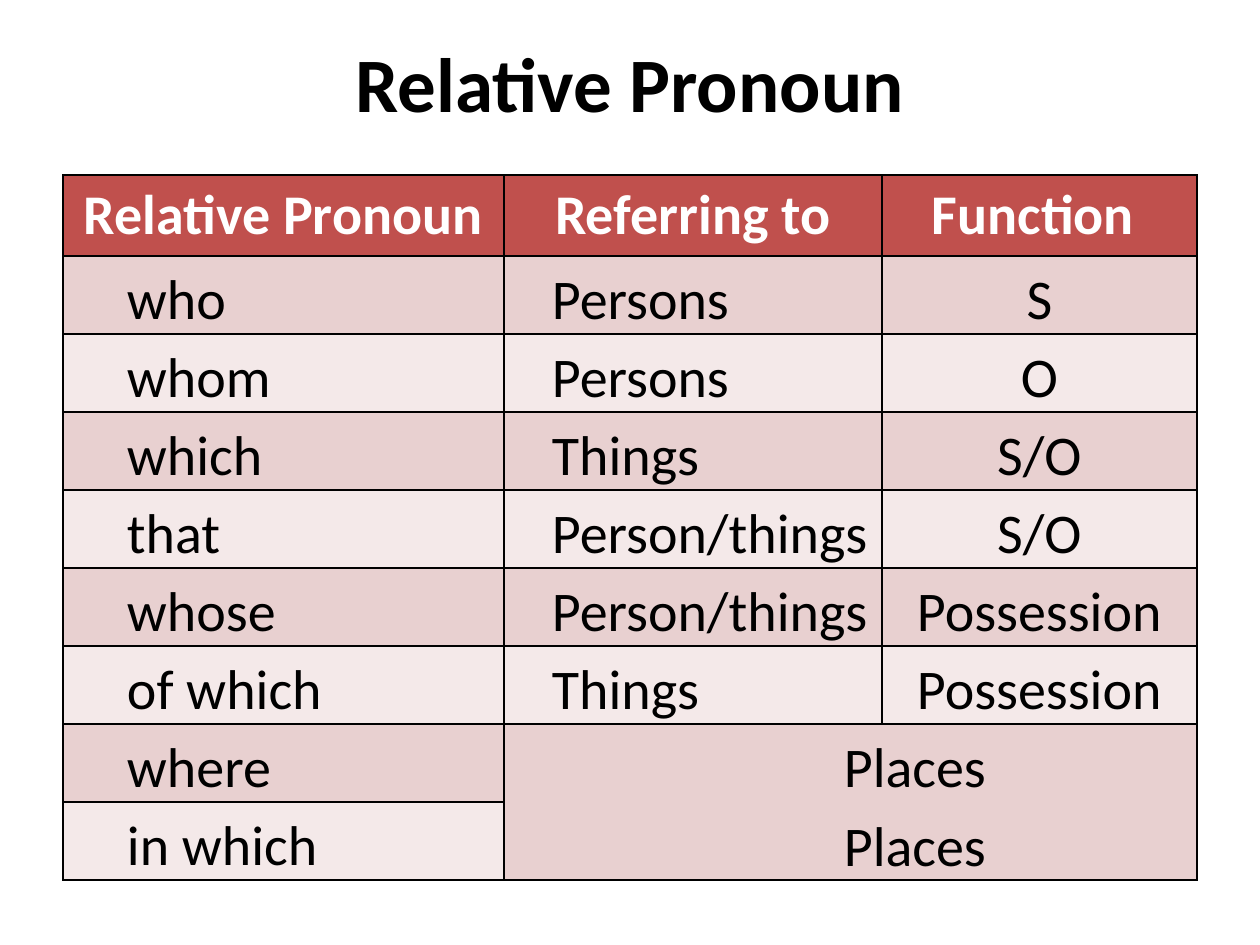
from lxml import etree
from pptx import Presentation
from pptx.dml.color import RGBColor
from pptx.enum.text import MSO_ANCHOR, PP_ALIGN
from pptx.oxml.ns import qn
from pptx.util import Pt

PX = 914400 // 126
CENTER, LEFT = PP_ALIGN.CENTER, PP_ALIGN.LEFT
MIDDLE = MSO_ANCHOR.MIDDLE


def rgb(value):
    return RGBColor.from_string(value)


def style(p, size, color, bold, align):
    p.alignment = align
    p.font.name = "Calibri"
    p.font.size = Pt(size)
    p.font.bold = bold
    p.font.color.rgb = rgb(color)


prs = Presentation()
prs.slide_width, prs.slide_height = 1260 * PX, 945 * PX
s = prs.slides.add_slide(prs.slide_layouts[6])

tf = s.shapes.add_textbox(63 * PX, 3 * PX, 1134 * PX, 158 * PX).text_frame
tf.word_wrap = True
tf.vertical_anchor = MIDDLE
p = tf.paragraphs[0]
p.text = "Relative Pronoun"
style(p, 44, "000000", True, CENTER)

rows = [
    ("Relative Pronoun", "Referring to", "Function "),
    ("who", "Persons", "S"),
    ("whom", "Persons", "O"),
    ("which", "Things", "S/O"),
    ("that", "Person/things", "S/O"),
    ("whose", "Person/things", "Possession"),
    ("of which", "Things", "Possession"),
    ("where", "Places\nPlaces", ""),
    ("in which", "", ""),
]
widths = [441, 378, 315]
indents = [55, 39, 0]
header_height, row_height = 81, 78
height = header_height + row_height * (len(rows) - 1)
table = s.shapes.add_table(len(rows), len(widths), 63 * PX, 175 * PX,
                           sum(widths) * PX, height * PX).table
for column, width in zip(table.columns, widths):
    column.width = width * PX
table.cell(7, 1).merge(table.cell(8, 2))

for i, texts in enumerate(rows):
    header = i == 0
    table.rows[i].height = (header_height if header else row_height) * PX
    for j, text in enumerate(texts):
        cell = table.cell(i, j)
        cell.fill.solid()
        cell.fill.fore_color.rgb = rgb(
            "C0504D" if header else "E8D0D0" if i % 2 else "F4E9E9")
        tcPr = cell._tc.get_or_add_tcPr()
        for k, side in enumerate(("a:lnL", "a:lnR", "a:lnT", "a:lnB")):
            ln = etree.Element(qn(side), w=str(Pt(1)))
            fill = etree.SubElement(ln, qn("a:solidFill"))
            etree.SubElement(fill, qn("a:srgbClr"), val="000000")
            tcPr.insert(k, ln)
        if cell.is_spanned:
            continue
        if not header:
            cell.margin_left = cell.margin_right = 9 * PX
            cell.margin_top = cell.margin_bottom = 0
        cell.text = text
        for p in cell.text_frame.paragraphs:
            if header:
                style(p, 32, "FFFFFF", True, CENTER)
                continue
            style(p, 32, "000000", False, CENTER if j == 2 else LEFT)
            p.line_spacing = 1.15
            indent = 331 if cell.is_merge_origin else indents[j]
            pPr = p._p.get_or_add_pPr()
            pPr.set("marL", str(indent * PX))
            pPr.set("indent", "0")

prs.save("out.pptx")
